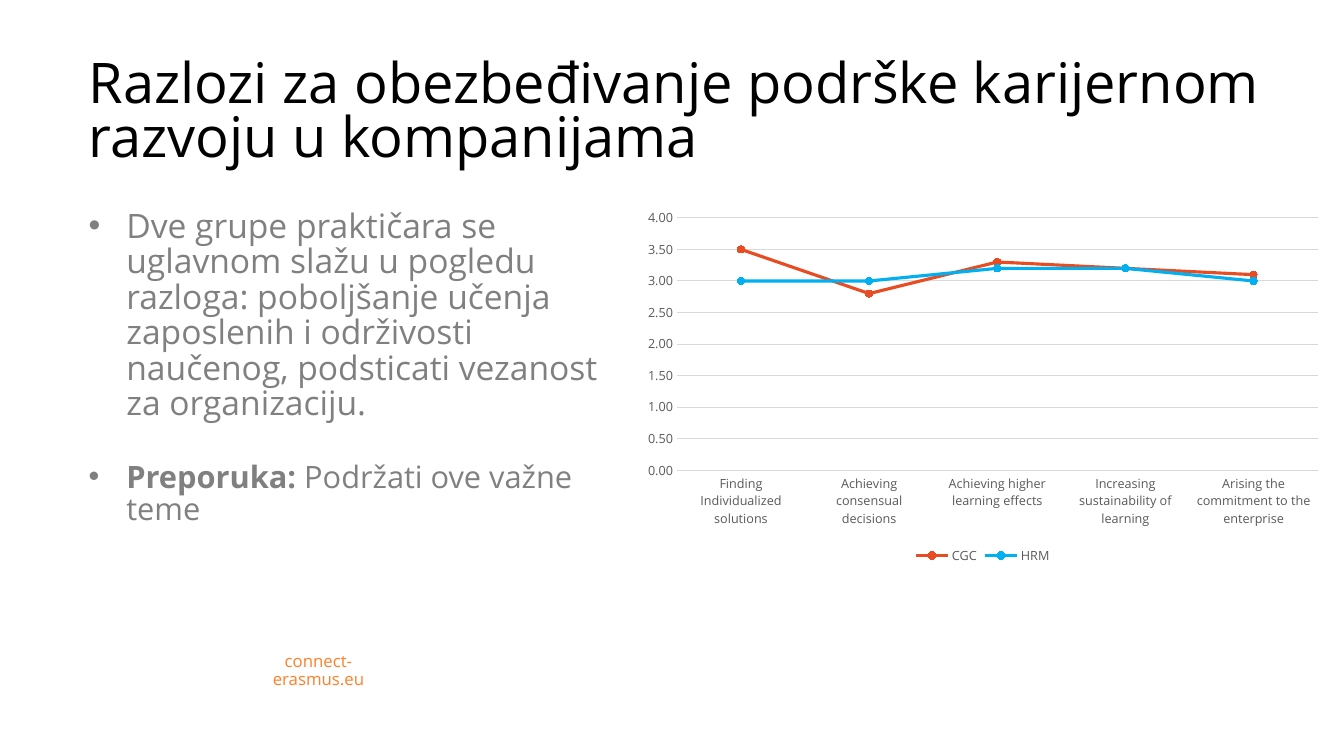
import pptx
import pptx.chart.data
import pptx.dml.color
import pptx.enum.chart
import pptx.enum.text
import pptx.oxml
import pptx.oxml.ns
import pptx.util

Pt = pptx.util.Pt
FONT = "Open Sans"
COLORS = {"title": "000000", "body": "808080", "site": "FF7F2A", "label": "595959",
          "grid": "D9D9D9", "CGC": "E84C22", "HRM": "00B0F0"}


def color(name):
    return pptx.dml.color.RGBColor.from_string(COLORS[name])


def style_font(font, size, name, bold=False):
    font.name = FONT
    font.size = Pt(size)
    font.bold = bold
    font.color.rgb = color(name)


presentation = pptx.Presentation()
presentation.slide_width = Pt(960)
presentation.slide_height = Pt(540)
slide = presentation.slides.add_slide(presentation.slide_layouts[5])

title = slide.shapes.title
title.left, title.top, title.width, title.height = Pt(56.16), Pt(5), Pt(879), Pt(115.2)
title_frame = title.text_frame
title_frame.text = "Razlozi za obezbeđivanje podrške karijernom razvoju u kompanijama"
title_frame.word_wrap = True
title_frame.auto_size = pptx.enum.text.MSO_AUTO_SIZE.NONE
title_frame.vertical_anchor = pptx.enum.text.MSO_ANCHOR.BOTTOM
title_frame.margin_bottom = 0
title_paragraph = title_frame.paragraphs[0]
title_paragraph.alignment = pptx.enum.text.PP_ALIGN.LEFT
title_paragraph.line_spacing = 0.8
style_font(title_paragraph.runs[0].font, 40, "title")

body = slide.shapes.add_textbox(Pt(56.16), Pt(144), Pt(397.44), Pt(351.36))
body_frame = body.text_frame
body_frame.word_wrap = True
body_frame.margin_top = Pt(6)
bullets = [
    (24, 0, [("Dve grupe praktičara se uglavnom slažu u pogledu razloga: poboljšanje učenja "
              "zaposlenih i održivosti naučenog, podsticati vezanost za organizaciju.", False)]),
    (22, 28, [("Preporuka: ", True), ("Podržati ove važne teme", False)]),
]
for index, (size, space_before, parts) in enumerate(bullets):
    paragraph = body_frame.add_paragraph() if index else body_frame.paragraphs[0]
    paragraph.line_spacing = 0.88
    paragraph.space_before = Pt(space_before)
    properties = paragraph._p.get_or_add_pPr()
    properties.set("marL", str(Pt(27)))
    properties.set("indent", str(-Pt(27)))
    properties.append(pptx.oxml.parse_xml(
        f'<a:buFont {pptx.oxml.ns.nsdecls("a")} typeface="Arial"/>'))
    properties.append(pptx.oxml.parse_xml(
        f'<a:buChar {pptx.oxml.ns.nsdecls("a")} char="•"/>'))
    for text, bold in parts:
        run = paragraph.add_run()
        run.text = text
        style_font(run.font, size, "body", bold)

site = slide.shapes.add_textbox(Pt(164.16), Pt(468.72), Pt(126.72), Pt(21.6))
site_frame = site.text_frame
site_frame.text = "connect-erasmus.eu"
site_frame.word_wrap = True
site_frame.margin_left = site_frame.margin_right = Pt(14)
site_frame.vertical_anchor = pptx.enum.text.MSO_ANCHOR.MIDDLE
site_paragraph = site_frame.paragraphs[0]
site_paragraph.alignment = pptx.enum.text.PP_ALIGN.CENTER
site_paragraph.line_spacing = 0.88
style_font(site_paragraph.runs[0].font, 12, "site")

chart_data = pptx.chart.data.CategoryChartData(number_format="###0.00")
chart_data.categories = [
    "Finding Individualized solutions",
    "Achieving consensual decisions",
    "Achieving higher learning effects",
    "Increasing sustainability of learning",
    "Arising the commitment to the enterprise",
]
chart_data.add_series("CGC", [3.5, 2.8, 3.3, 3.2, 3.1])
chart_data.add_series("HRM", [3, 3, 3.2, 3.2, 3])
chart = slide.shapes.add_chart(
    pptx.enum.chart.XL_CHART_TYPE.LINE_MARKERS,
    Pt(452.88), Pt(144), Pt(498.24), Pt(262.08), chart_data).chart
chart.has_title = False
style_font(chart.font, 10, "title")
chart.has_legend = True
chart.legend.position = pptx.enum.chart.XL_LEGEND_POSITION.BOTTOM
chart.legend.include_in_layout = False
style_font(chart.legend.font, 9, "label")

category_axis, value_axis = chart.category_axis, chart.value_axis
for axis in (category_axis, value_axis):
    axis.major_tick_mark = pptx.enum.chart.XL_TICK_MARK.NONE
    axis.minor_tick_mark = pptx.enum.chart.XL_TICK_MARK.NONE
    style_font(axis.tick_labels.font, 9, "label")
value_axis.minimum_scale = 0
value_axis.maximum_scale = 4
value_axis.major_unit = 0.5
value_axis.has_major_gridlines = True
value_axis.tick_labels.number_format = "###0.00"
value_axis.tick_labels.number_format_is_linked = False
value_axis.format.line.fill.background()
for line in (category_axis.format.line, value_axis.major_gridlines.format.line):
    line.color.rgb = color("grid")
    line.width = Pt(0.75)

chart.plots[0].vary_by_categories = False
for series in chart.plots[0].series:
    series.smooth = False
    series.format.line.color.rgb = color(series.name)
    series.format.line.width = Pt(2.25)
    series.marker.style = pptx.enum.chart.XL_MARKER_STYLE.CIRCLE
    series.marker.size = 5
    series.marker.format.fill.solid()
    series.marker.format.fill.fore_color.rgb = color(series.name)
    series.marker.format.line.color.rgb = color(series.name)

presentation.save("out.pptx")
